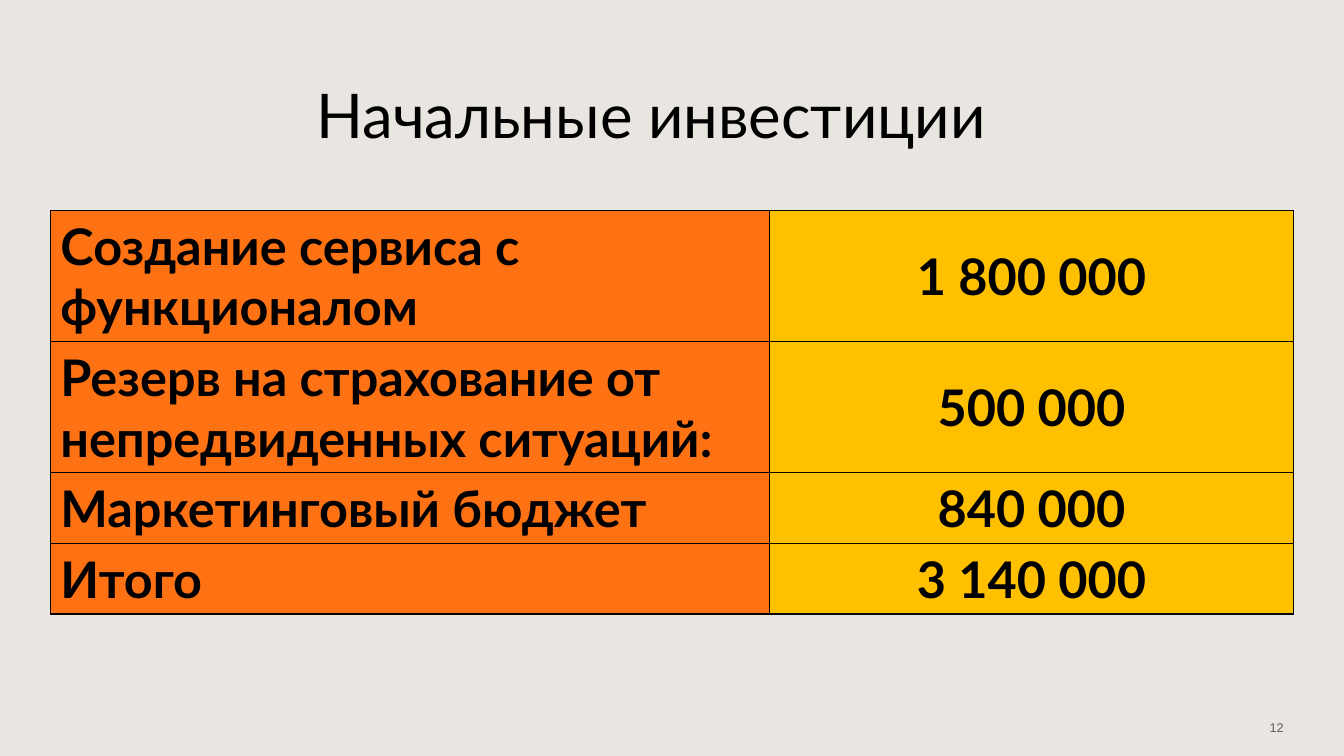
from dataclasses import dataclass

import pptx
import pptx.dml.color
import pptx.enum.shapes
import pptx.enum.text
import pptx.oxml
import pptx.oxml.ns
import pptx.util
from pptx.util import Inches

ALIGN = pptx.enum.text.PP_ALIGN
MIDDLE = pptx.enum.text.MSO_ANCHOR.MIDDLE


@dataclass(frozen=True)
class Theme:
    backdrop: str = "E0DAD4"
    ink: str = "000000"
    label_fill: str = "FF7214"
    amount_fill: str = "FFC000"
    main_font: str = "Lato"
    number_font: str = "Arial"
    title_size: int = 44
    table_size: int = 36
    number_size: int = 9
    border_width: int = 1


THEME = Theme()

INVESTMENTS = [
    ("Создание сервиса с функционалом", "1 800 000"),
    ("Резерв на страхование от непредвиденных ситуаций:", "500 000"),
    ("Маркетинговый бюджет", "840 000"),
    ("Итого", "3 140 000"),
]
COLUMN_WIDTHS = (7.13, 5.2)
ROW_HEIGHTS = (1.3, 1.3, 0.7, 0.7)


def paint(fill, color, opacity=100):
    """Make a fill solid, with opacity in percent."""
    fill.solid()
    fill.fore_color.rgb = pptx.dml.color.RGBColor.from_string(color)
    if opacity < 100:
        for tone in fill._xPr.iter(pptx.oxml.ns.qn("a:srgbClr")):
            alpha = tone.makeelement(pptx.oxml.ns.qn("a:alpha"), {"val": str(opacity * 1000)})
            tone.append(alpha)


def write(frame, text, *, size, font=THEME.main_font, bold=False, align=ALIGN.LEFT, opacity=100):
    frame.word_wrap = True
    para = frame.paragraphs[0]
    para.alignment = align
    span = para.add_run()
    span.text = text
    span.font.size = pptx.util.Pt(size)
    span.font.name = font
    span.font.bold = bold
    paint(span.font.fill, THEME.ink, opacity)


def add_backdrop(slide, width, height):
    backdrop = slide.shapes.add_shape(
        pptx.enum.shapes.MSO_SHAPE.RECTANGLE, 0, 0, width, height)
    backdrop.shadow.inherit = False
    backdrop.line.fill.background()
    paint(backdrop.fill, THEME.backdrop, opacity=70)


def add_label(slide, text, left, top, width, height, **text_format):
    box = slide.shapes.add_textbox(Inches(left), Inches(top), Inches(width), Inches(height))
    box.text_frame.vertical_anchor = MIDDLE
    write(box.text_frame, text, **text_format)


def add_borders(cell):
    properties = cell._tc.get_or_add_tcPr()
    width = pptx.util.Pt(THEME.border_width)
    for position, side in enumerate(("lnL", "lnR", "lnT", "lnB")):
        properties.insert(position, pptx.oxml.parse_xml(
            f'<a:{side} {pptx.oxml.ns.nsdecls("a")} w="{width}"><a:solidFill>'
            f'<a:srgbClr val="{THEME.ink}"/></a:solidFill></a:{side}>'))


def add_investment_table(slide, left, top):
    table = slide.shapes.add_table(
        len(INVESTMENTS), len(COLUMN_WIDTHS), Inches(left), Inches(top),
        Inches(sum(COLUMN_WIDTHS)), Inches(sum(ROW_HEIGHTS))).table
    table.first_row = table.horz_banding = False
    for column, width in zip(table.columns, COLUMN_WIDTHS):
        column.width = Inches(width)
    styles = ((THEME.label_fill, ALIGN.LEFT), (THEME.amount_fill, ALIGN.CENTER))
    for row, height, texts in zip(table.rows, ROW_HEIGHTS, INVESTMENTS):
        row.height = Inches(height)
        for cell, text, (color, align) in zip(row.cells, texts, styles):
            cell.vertical_anchor = MIDDLE
            paint(cell.fill, color)
            add_borders(cell)
            write(cell.text_frame, text, size=THEME.table_size, bold=True, align=align)


def main():
    deck = pptx.Presentation()
    deck.slide_width, deck.slide_height = Inches(13.33), Inches(7.5)
    slide = deck.slides.add_slide(deck.slide_layouts[6])
    add_backdrop(slide, deck.slide_width, deck.slide_height)
    add_label(slide, "Начальные инвестиции", 0.5, 0.4, 11.92, 1.45,
              size=THEME.title_size, align=ALIGN.CENTER)
    add_investment_table(slide, 0.5, 2.09)
    add_label(slide, "12", 9.83, 7.02, 3, 0.4, size=THEME.number_size,
              font=THEME.number_font, align=ALIGN.RIGHT, opacity=60)
    deck.save("out.pptx")


if __name__ == "__main__":
    main()
